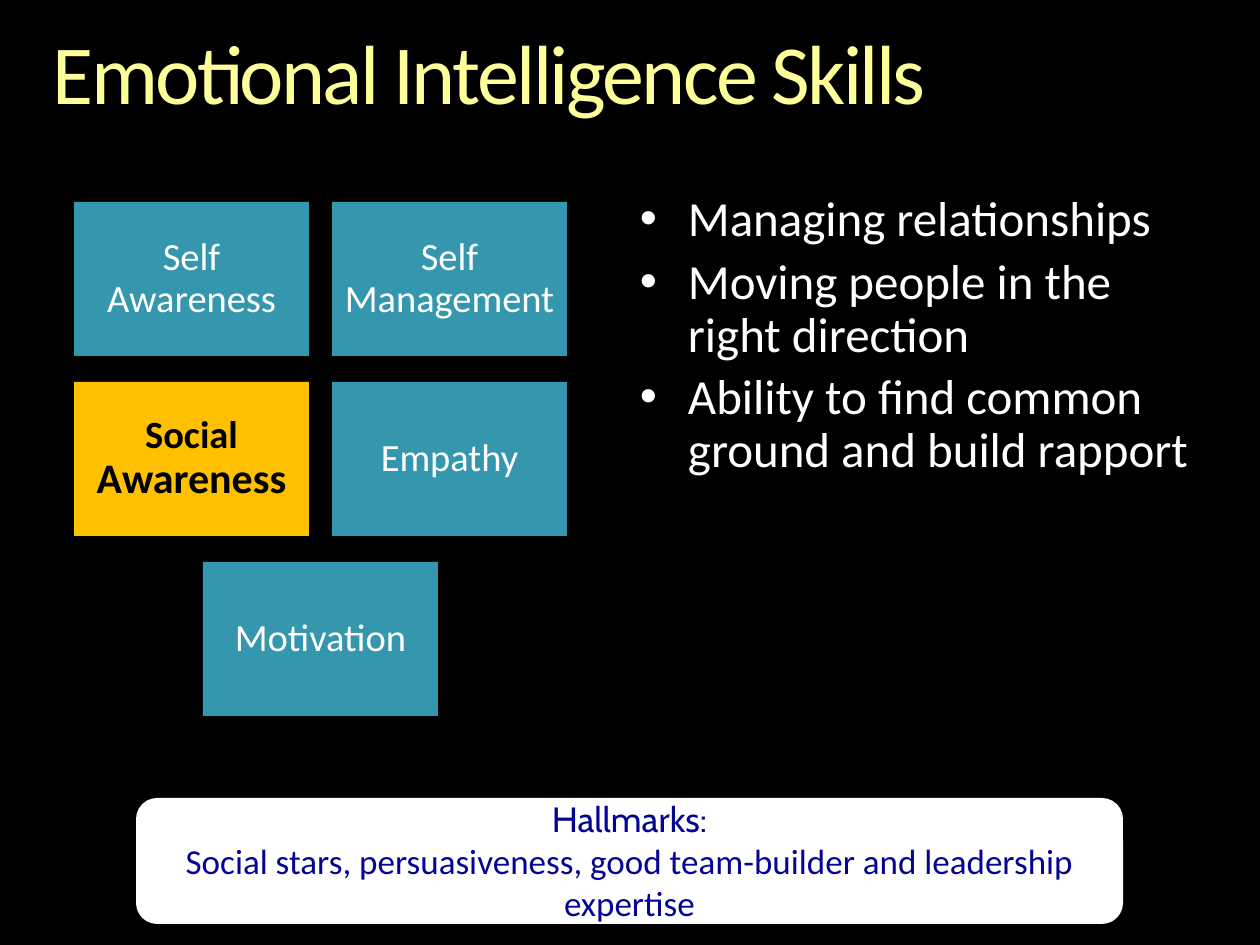
"""Build the Emotional Intelligence Skills slide."""
from typing import NamedTuple

from lxml import etree
from pptx import Presentation
from pptx.dml.color import RGBColor
from pptx.enum.shapes import MSO_SHAPE
from pptx.enum.text import MSO_ANCHOR, PP_ALIGN
from pptx.oxml.ns import qn
from pptx.util import Emu, Pt

RECTANGLE, ROUNDED = MSO_SHAPE.RECTANGLE, MSO_SHAPE.ROUNDED_RECTANGLE
MIDDLE, CENTER = MSO_ANCHOR.MIDDLE, PP_ALIGN.CENTER

BLACK = RGBColor(0x00, 0x00, 0x00)
WHITE = RGBColor(0xFF, 0xFF, 0xFF)
YELLOW = RGBColor(0xFF, 0xFF, 0x99)
TEAL = RGBColor(0x34, 0x97, 0xAE)
GOLD = RGBColor(0xFF, 0xC0, 0x00)
NAVY = RGBColor(0x05, 0x05, 0x95)

EMU_PER_PX = 914400 / 126
TILE_WIDTH, TILE_HEIGHT = 235, 154
GRID_LEFT, GRID_TOP = 74, 202
COLUMN_STEP, ROW_STEP = 258, 180
BULLET_INDENT = 48


class Box(NamedTuple):
    left: int
    top: int
    width: int
    height: int


class Word(NamedTuple):
    text: str
    size: int = 22
    color: RGBColor = WHITE
    bold: bool = False
    face: str = "Calibri"


class Skill(NamedTuple):
    words: list[Word]
    column: float
    row: int
    fill: RGBColor = TEAL


SKILLS = [
    Skill([Word("Self Awareness")], 0, 0),
    Skill([Word("Self Management")], 1, 0),
    Skill([Word("Social ", 22, BLACK, True), Word("Awareness", 24, BLACK, True)], 0, 1, GOLD),
    Skill([Word("Empathy")], 1, 1),
    Skill([Word("Motivation")], 0.5, 2),
]
ABILITIES = [
    "Managing relationships",
    "Moving people in the right direction",
    "Ability to find common ground and build rapport",
]
HALLMARKS = [
    Word("Hallmarks:", 20, NAVY, face="Cabin"),
    Word("Social stars, persuasiveness, good team-builder and leadership expertise", 20, NAVY),
]


def px(length: float) -> Emu:
    return Emu(round(length * EMU_PER_PX))


def set_margins(frame, horizontal: int, vertical: int) -> None:
    frame.word_wrap = True
    frame.margin_left = frame.margin_right = px(horizontal)
    frame.margin_top = frame.margin_bottom = px(vertical)


def write(paragraph, words: list[Word]):
    for word in words:
        run = paragraph.add_run()
        run.text = word.text
        run.font.name = word.face
        run.font.size = Pt(word.size)
        run.font.bold = word.bold
        run.font.color.rgb = word.color
    return paragraph


def add_text_area(slide, box: Box):
    frame = slide.shapes.add_textbox(*map(px, box)).text_frame
    set_margins(frame, 0, 0)
    return frame


def add_panel(slide, preset, box: Box, fill: RGBColor):
    panel = slide.shapes.add_shape(preset, *map(px, box))
    panel.shadow.inherit = False
    panel.fill.solid()
    panel.fill.fore_color.rgb = fill
    panel.line.fill.background()
    panel.text_frame.vertical_anchor = MIDDLE
    return panel


def add_title(slide) -> None:
    title = write(add_text_area(slide, Box(53, 32, 1155, 92)).paragraphs[0],
                  [Word("Emotional Intelligence Skills", 48, YELLOW)])
    title.line_spacing = 0.9
    title.runs[0].font._element.set("spc", "-150")


def add_abilities(slide) -> None:
    frame = add_text_area(slide, Box(640, 194, 567, 357))
    for index, ability in enumerate(ABILITIES):
        paragraph = frame.add_paragraph() if index else frame.paragraphs[0]
        properties = paragraph._p.get_or_add_pPr()
        properties.set("marL", str(px(BULLET_INDENT)))
        properties.set("indent", str(px(-BULLET_INDENT)))
        etree.SubElement(properties, qn("a:buFont")).set("typeface", "Arial")
        etree.SubElement(properties, qn("a:buChar")).set("char", "•")
        write(paragraph, [Word(ability, 28)])
        paragraph.line_spacing = 0.9
        if index:
            paragraph.space_before = Pt(5.6)


def add_skill(slide, skill: Skill) -> None:
    box = Box(round(GRID_LEFT + skill.column * COLUMN_STEP),
              GRID_TOP + skill.row * ROW_STEP, TILE_WIDTH, TILE_HEIGHT)
    frame = add_panel(slide, RECTANGLE, box, skill.fill).text_frame
    set_margins(frame, 11, 11)
    label = write(frame.paragraphs[0], skill.words)
    label.alignment = CENTER
    label.line_spacing = 0.9


def add_hallmarks(slide) -> None:
    frame = add_panel(slide, ROUNDED, Box(136, 798, 987, 126), WHITE).text_frame
    set_margins(frame, 13, 6)
    for index, line in enumerate(HALLMARKS):
        paragraph = frame.add_paragraph() if index else frame.paragraphs[0]
        write(paragraph, [line]).alignment = CENTER


def main() -> None:
    deck = Presentation()
    deck.slide_width, deck.slide_height = px(1260), px(945)
    slide = deck.slides.add_slide(deck.slide_layouts[6])
    slide.background.fill.solid()
    slide.background.fill.fore_color.rgb = BLACK
    add_title(slide)
    add_abilities(slide)
    for skill in SKILLS:
        add_skill(slide, skill)
    add_hallmarks(slide)
    deck.save("out.pptx")


if __name__ == "__main__":
    main()
